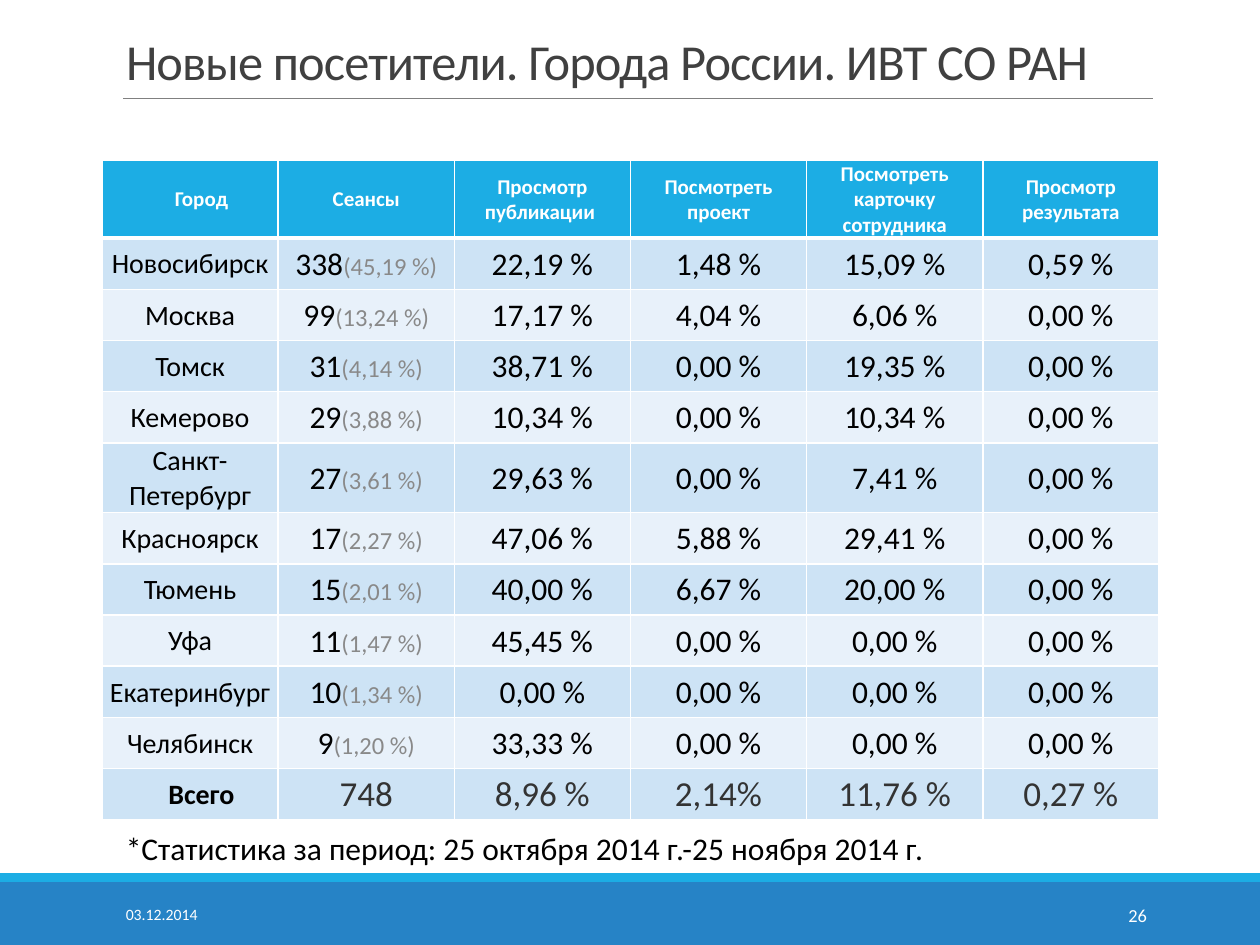
from lxml.etree import SubElement
from pptx import Presentation
from pptx.dml.color import RGBColor
from pptx.enum.shapes import MSO_CONNECTOR, MSO_SHAPE
from pptx.enum.text import MSO_ANCHOR, MSO_AUTO_SIZE, PP_ALIGN
from pptx.oxml.ns import qn
from pptx.util import Inches, Pt

# Content
TITLE = "Новые посетители. Города России. ИВТ СО РАН"
HEADERS = ["Город", "Сеансы", "Просмотр публикации ", "Посмотреть проект",
           "Посмотреть карточку сотрудника", "Просмотр результата"]
# City, sessions, share of sessions (%), then the four conversion rates (%)
CITIES = [
    ("Новосибирск", "338", "45,19", "22,19", "1,48", "15,09", "0,59"),
    ("Москва", "99", "13,24", "17,17", "4,04", "6,06", "0,00"),
    ("Томск", "31", "4,14", "38,71", "0,00", "19,35", "0,00"),
    ("Кемерово", "29", "3,88", "10,34", "0,00", "10,34", "0,00"),
    ("Санкт-Петербург", "27", "3,61", "29,63", "0,00", "7,41", "0,00"),
    ("Красноярск", "17", "2,27", "47,06", "5,88", "29,41", "0,00"),
    ("Тюмень", "15", "2,01", "40,00", "6,67", "20,00", "0,00"),
    ("Уфа", "11", "1,47", "45,45", "0,00", "0,00", "0,00"),
    ("Екатеринбург", "10", "1,34", "0,00", "0,00", "0,00", "0,00"),
    ("Челябинск", "9", "1,20", "33,33", "0,00", "0,00", "0,00"),
]
TOTALS = ["Всего", "748", "8,96 %", "2,14%", "11,76 %", "0,27 %"]
PERIOD = "*Статистика за период: 25 октября 2014 г.-25 ноября 2014 г."
DATE, PAGE = "03.12.2014", "26"

# Style
FONT = "Calibri"
NBSP = chr(160)
BLACK = RGBColor(0x00, 0x00, 0x00)
WHITE = RGBColor(0xFF, 0xFF, 0xFF)
TITLE_GRAY = RGBColor(0x40, 0x40, 0x40)
TOTAL_GRAY = RGBColor(0x33, 0x33, 0x33)
SHARE_GRAY = RGBColor(0x89, 0x89, 0x89)
RULE_GRAY = RGBColor(0x80, 0x80, 0x80)
BLUE = RGBColor(0x26, 0x83, 0xC6)
CYAN = RGBColor(0x1C, 0xAD, 0xE4)
BAND_DARK = RGBColor(0xCD, 0xE3, 0xF5)
BAND_LIGHT = RGBColor(0xE8, 0xF1, 0xFA)


def add_text(tf, text, size=18, color=BLACK, bold=False, align=PP_ALIGN.LEFT):
    """Append a run to the first paragraph of a text frame."""
    p = tf.paragraphs[0]
    p.alignment = align
    r = p.add_run()
    r.text = text
    r.font.name, r.font.size, r.font.bold = FONT, Pt(size), bold
    r.font.color.rgb = color
    return r


def add_box(s, left, top, width, height, text, anchor=MSO_ANCHOR.MIDDLE,
            wrap=True, **fmt):
    tf = s.shapes.add_textbox(*map(Inches, (left, top, width, height))).text_frame
    tf.word_wrap, tf.vertical_anchor = wrap, anchor
    add_text(tf, text, **fmt)
    return tf


def add_band(s, top, height, color):
    sp = s.shapes.add_shape(MSO_SHAPE.RECTANGLE, 0, Inches(top),
                            Inches(10), Inches(height))
    sp.shadow.inherit = False
    sp.fill.solid()
    sp.fill.fore_color.rgb = color
    sp.line.fill.background()


def style_cell(cell, fill, top=1, bottom=1, left_margin=0.01):
    """White borders (points), fill, margins and middle anchor."""
    tcPr = cell._tc.get_or_add_tcPr()
    for side, width in (("L", 1), ("R", 1), ("T", top), ("B", bottom)):
        ln = SubElement(tcPr, qn("a:ln" + side), w=str(Pt(width)))
        SubElement(SubElement(ln, qn("a:solidFill")), qn("a:srgbClr"), val=str(WHITE))
    cell.fill.solid()
    cell.fill.fore_color.rgb = fill
    cell.margin_left = Inches(left_margin)
    cell.margin_top = cell.margin_right = Inches(0.01)
    cell.margin_bottom = 0
    cell.vertical_anchor = MSO_ANCHOR.MIDDLE


def cell_runs(row, col):
    """Runs of a table cell as (text, format) pairs."""
    if row == 0:
        return [(HEADERS[col], dict(size=12, color=WHITE, bold=True))]
    if row > len(CITIES):
        if col == 0:
            return [(TOTALS[0], dict(size=16, bold=True))]
        return [(TOTALS[col].replace(" ", NBSP), dict(size=20, color=TOTAL_GRAY))]
    city, sessions, share, *rates = CITIES[row - 1]
    if col == 0:
        return [(city, dict(size=16))]
    if col == 1:
        return [(sessions, {}),
                (f"({share}{NBSP}%)", dict(size=14, color=SHARE_GRAY))]
    return [(f"{rates[col - 2]}{NBSP}%", {})]


def add_stats_table(s):
    n_rows, n_cols = len(CITIES) + 2, len(HEADERS)
    table = s.shapes.add_table(n_rows, n_cols, Inches(0.81), Inches(1.27),
                               Inches(8.39), Inches(4.88)).table
    for row in range(n_rows):
        fill = CYAN if row == 0 else BAND_DARK if row % 2 else BAND_LIGHT
        for col in range(n_cols):
            cell = table.cell(row, col)
            indented = col == 0 and row in (0, n_rows - 1)
            style_cell(cell, fill, top=3 if row == 1 else 1,
                       bottom=3 if row == 0 else 1,
                       left_margin=0.19 if indented else 0.01)
            for text, fmt in cell_runs(row, col):
                add_text(cell.text_frame, text, align=PP_ALIGN.CENTER, **fmt)


def main():
    prs = Presentation()
    prs.slide_width, prs.slide_height = Inches(10), Inches(7.5)
    s = prs.slides.add_slide(prs.slide_layouts[5])

    # Footer bands and rule under the title
    add_band(s, 7, 0.5, BLUE)
    add_band(s, 6.93, 0.07, CYAN)
    rule = s.shapes.add_connector(MSO_CONNECTOR.STRAIGHT, Inches(0.98), Inches(0.78),
                                  Inches(9.15), Inches(0.78))
    rule.line.color.rgb, rule.line.width = RULE_GRAY, Pt(0.5)
    SubElement(rule._element.spPr, qn("a:effectLst"))

    # Title
    title = s.shapes.title
    title.left, title.top = Inches(0.9), Inches(0.31)
    title.width, title.height = Inches(8.25), Inches(0.46)
    tf = title.text_frame
    tf.auto_size, tf.vertical_anchor = MSO_AUTO_SIZE.NONE, MSO_ANCHOR.BOTTOM
    r = add_text(tf, TITLE, size=28.8, color=TITLE_GRAY)
    r.font._element.set("spc", "-50")
    tf.paragraphs[0].line_spacing = 0.85

    add_stats_table(s)

    # Date, page number and period note
    add_box(s, 0.9, 7.06, 2.03, 0.4, DATE, size=9, color=WHITE)
    add_box(s, 8.12, 7.06, 1.08, 0.4, PAGE, size=10.5, color=WHITE,
            align=PP_ALIGN.RIGHT)
    note = add_box(s, 0.9, 6.53, 6.68, 0.4, PERIOD, anchor=MSO_ANCHOR.TOP, wrap=False)
    note.auto_size = MSO_AUTO_SIZE.SHAPE_TO_FIT_TEXT

    prs.save("out.pptx")


if __name__ == "__main__":
    main()
